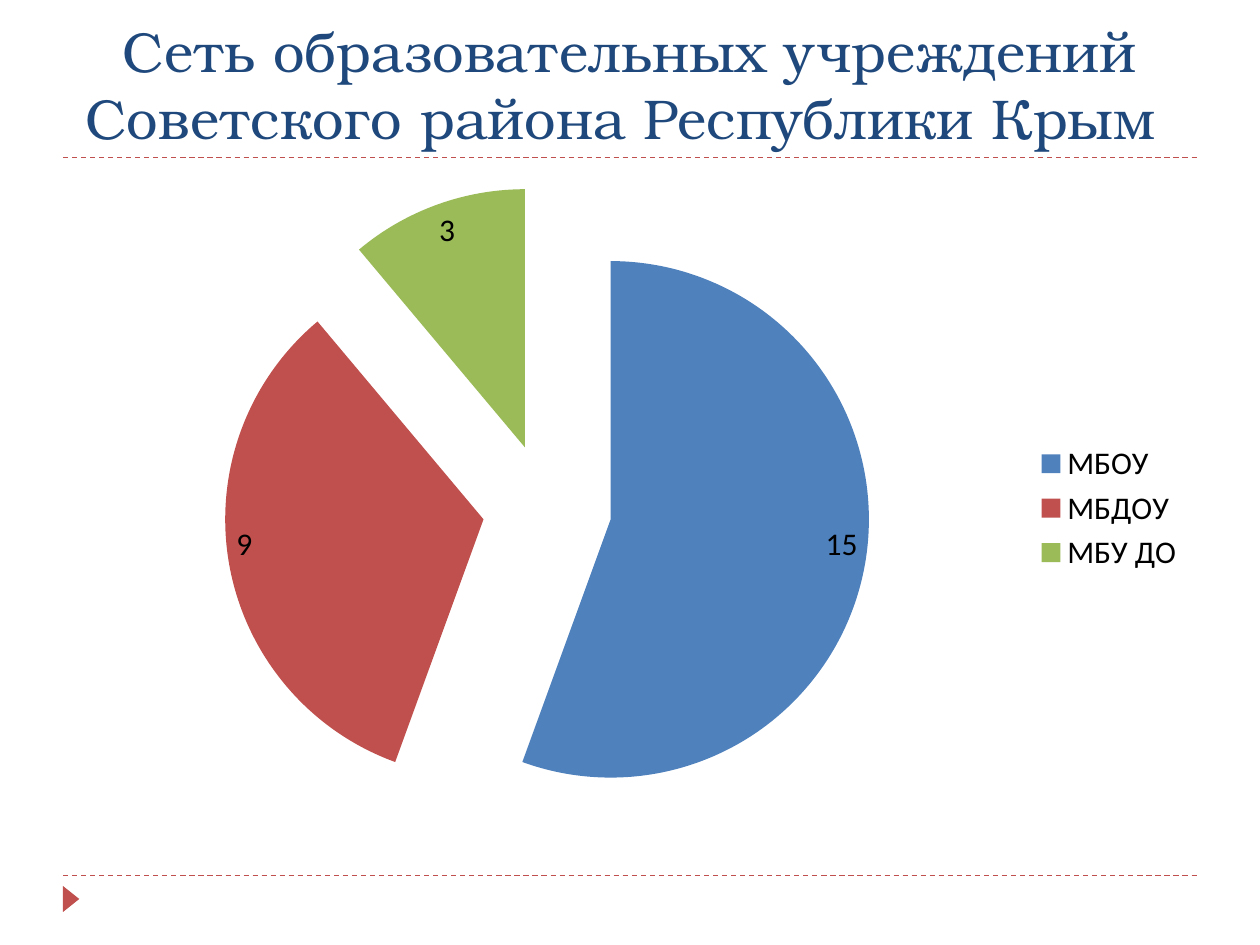
from lxml import etree
from pptx import Presentation
from pptx.chart.data import CategoryChartData
from pptx.dml.color import RGBColor
from pptx.enum.chart import XL_CHART_TYPE, XL_LABEL_POSITION, XL_LEGEND_POSITION
from pptx.enum.dml import MSO_LINE
from pptx.enum.shapes import MSO_CONNECTOR, MSO_SHAPE
from pptx.enum.text import MSO_ANCHOR, PP_ALIGN
from pptx.oxml.ns import qn
from pptx.util import Pt

PIE = XL_CHART_TYPE.PIE
IN_END = XL_LABEL_POSITION.INSIDE_END
RIGHT = XL_LEGEND_POSITION.RIGHT
DASH = MSO_LINE.DASH
STRAIGHT = MSO_CONNECTOR.STRAIGHT
TRIANGLE = MSO_SHAPE.ISOSCELES_TRIANGLE
BOTTOM = MSO_ANCHOR.BOTTOM
CENTER = PP_ALIGN.CENTER

NAVY = RGBColor(0x1F, 0x49, 0x7D)
BLUE = RGBColor(0x4F, 0x81, 0xBD)
RED = RGBColor(0xC0, 0x50, 0x4D)
GREEN = RGBColor(0x9B, 0xBB, 0x59)
BLACK = RGBColor(0, 0, 0)

LEFT, WIDTH = 36, 648
TITLE = " Сеть образовательных учреждений \vСоветского района Республики Крым "
UNITS = [("МБОУ", 15, BLUE), ("МБДОУ", 9, RED), ("МБУ ДО", 3, GREEN)]


def add_rule(slide, left, top, width):
    rule = slide.shapes.add_connector(
        STRAIGHT, Pt(left), Pt(top), Pt(left + width), Pt(top))
    rule.line.color.rgb = RED
    rule.line.width = Pt(0.75)
    rule.line.dash_style = DASH
    etree.SubElement(rule._element.spPr, qn("a:effectLst"))


def add_marker(slide, left, top, width, height):
    mark = slide.shapes.add_shape(
        TRIANGLE, Pt(left), Pt(top), Pt(width), Pt(height))
    mark.rotation = 90
    mark.shadow.inherit = False
    mark.fill.solid()
    mark.fill.fore_color.rgb = RED
    mark.line.fill.background()


def add_title(slide, left, top, width, height):
    title = slide.shapes.title
    title.left, title.top = Pt(left), Pt(top)
    title.width, title.height = Pt(width), Pt(height)
    frame = title.text_frame
    frame.text = TITLE
    frame.word_wrap = True
    frame.vertical_anchor = BOTTOM
    para = frame.paragraphs[0]
    para.alignment = CENTER
    para.font.name = "TeX Gyre Bonum"
    para.font.size = Pt(32)
    para.font.color.rgb = NAVY


def add_pie(slide, left, top, width, height):
    data = CategoryChartData()
    data.categories = [name for name, _, _ in UNITS]
    data.add_series("Series 1", [count for _, count, _ in UNITS])
    chart = slide.shapes.add_chart(
        PIE, Pt(left), Pt(top), Pt(width), Pt(height), data).chart
    chart.has_title = False
    chart.font.name = "Calibri"
    chart.font.size = Pt(18)
    chart.font.color.rgb = BLACK
    chart.has_legend = True
    chart.legend.position = RIGHT
    chart.legend.include_in_layout = False

    plot = chart.plots[0]
    plot.vary_by_categories = True
    plot.has_data_labels = True
    plot.data_labels.show_value = True
    plot.data_labels.position = IN_END

    series = plot.series[0]
    burst = etree.Element(qn("c:explosion"), val="25")
    series._element.find(qn("c:tx")).addnext(burst)
    for i, (_, _, color) in enumerate(UNITS):
        fill = series.points[i].format.fill
        fill.solid()
        fill.fore_color.rgb = color


def main():
    deck = Presentation()
    deck.slide_width, deck.slide_height = Pt(720), Pt(540)
    slide = deck.slides.add_slide(deck.slide_layouts[5])
    for top in (500.4, 90):
        add_rule(slide, LEFT, top, WIDTH)
    add_marker(slide, 33.1, 509, 15, 9.4)
    add_title(slide, LEFT, 12.2, WIDTH, 77.8)
    add_pie(slide, LEFT, 96, WIDTH, 388.8)
    deck.save("out.pptx")


if __name__ == "__main__":
    main()
